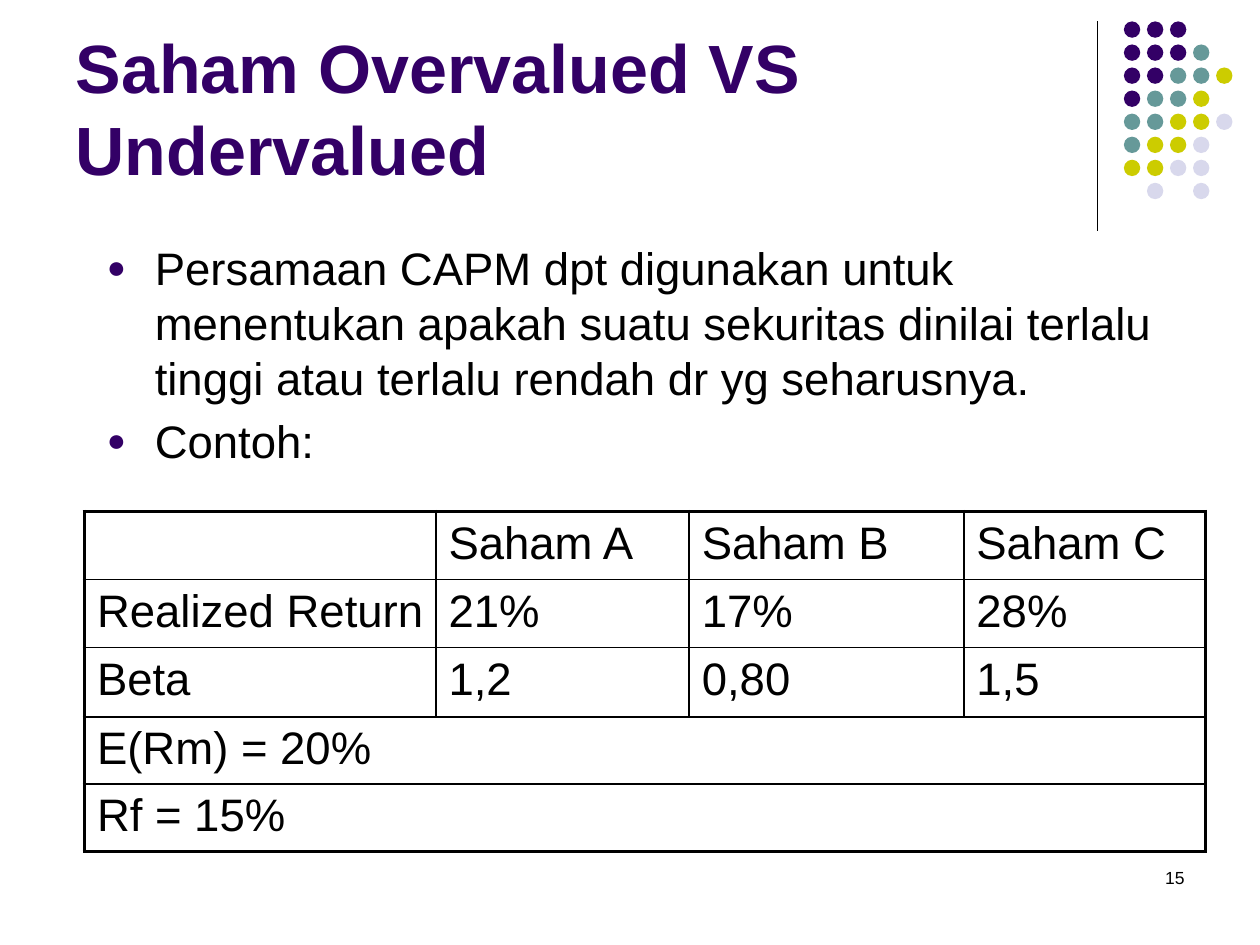
from lxml import etree
from pptx import Presentation, util as u
from pptx.dml.color import RGBColor
from pptx.enum import shapes, text
from pptx.oxml import ns

THEME = {
    "font": "Arial", "title_size": 39, "body_size": 26, "number_size": 10,
    "ink": "000000", "purple": "330066", "teal": "669999",
    "olive": "CCCC00", "lilac": "D8D8EC", "thin": 1, "thick": 2.25,
}

TITLE = "Saham Overvalued VS Undervalued"
BULLETS = [
    "Persamaan CAPM dpt digunakan untuk menentukan apakah suatu sekuritas "
    "dinilai terlalu tinggi atau terlalu rendah dr yg seharusnya.",
    "Contoh:",
]
ROWS = [
    ["", "Saham A", "Saham B", "Saham C"],
    ["Realized Return", "21%", "17%", "28%"],
    ["Beta", "1,2", "0,80", "1,5"],
    ["E(Rm) = 20%"],
    ["Rf = 15%"],
]
COLUMN_WIDTHS = [2.79, 2.01, 2.18, 1.92]
ROW_HEIGHTS = [0.54, 0.54, 0.55, 0.5, 0.5]
SLIDE_NUMBER = "15"

DOTS = ["PPP", "PPPT", "PPTTO", "PTTO", "TTOOL", "TOOL", "OOLL", " L L"]
DOT_COLORS = {"P": "purple", "T": "teal", "O": "olive", "L": "lilac"}
DOT_LEFT, DOT_TOP, DOT_SIZE, DOT_PITCH = 8.92, 0.17, 0.13, 0.183


def color(name):
    return RGBColor.from_string(THEME[name])


def box(left, top, width, height):
    return [u.Inches(value) for value in (left, top, width, height)]


def add_run(paragraph, words, size, ink="ink", bold=False):
    run = paragraph.add_run()
    run.text = words
    run.font.name = THEME["font"]
    run.font.size = u.Pt(THEME[size])
    run.font.bold = bold
    run.font.color.rgb = color(ink)


def add_bullet(paragraph):
    properties = paragraph._p.get_or_add_pPr()
    properties.set("marL", str(u.Inches(0.38)))
    properties.set("indent", str(u.Inches(-0.38)))
    bullet_color = etree.SubElement(properties, ns.qn("a:buClr"))
    etree.SubElement(bullet_color, ns.qn("a:srgbClr"), val=THEME["purple"])
    etree.SubElement(properties, ns.qn("a:buSzPct"), val="70000")
    etree.SubElement(properties, ns.qn("a:buFont"), typeface=THEME["font"])
    etree.SubElement(properties, ns.qn("a:buChar"), char="●")


def set_borders(cell, widths):
    properties = cell._tc.get_or_add_tcPr()
    for position, (side, width) in enumerate(widths.items()):
        line = etree.Element(ns.qn(f"a:ln{side}"), w=str(u.Pt(width)))
        fill = etree.SubElement(line, ns.qn("a:solidFill"))
        etree.SubElement(fill, ns.qn("a:srgbClr"), val=THEME["ink"])
        properties.insert(position, line)


def add_decoration(slide):
    divider = slide.shapes.add_connector(
        shapes.MSO_CONNECTOR.STRAIGHT, *box(8.71, 0.17, 8.71, 1.83))
    divider.line.color.rgb = color("ink")
    divider.line.width = u.Pt(0.75)
    etree.SubElement(divider._element.spPr, ns.qn("a:effectLst"))
    for row, pattern in enumerate(DOTS):
        for column, key in enumerate(pattern):
            if key == " ":
                continue
            dot = slide.shapes.add_shape(
                shapes.MSO_SHAPE.OVAL,
                *box(DOT_LEFT + column * DOT_PITCH, DOT_TOP + row * DOT_PITCH,
                     DOT_SIZE, DOT_SIZE))
            dot.shadow.inherit = False
            dot.fill.solid()
            dot.fill.fore_color.rgb = color(DOT_COLORS[key])
            dot.line.fill.background()


def add_title(slide):
    title = slide.shapes.title
    title.left, title.top, title.width, title.height = box(0.5, 0.13, 8.25, 1.42)
    frame = title.text_frame
    frame.auto_size = text.MSO_AUTO_SIZE.NONE
    frame.vertical_anchor = text.MSO_ANCHOR.BOTTOM
    frame.paragraphs[0].alignment = text.PP_ALIGN.LEFT
    add_run(frame.paragraphs[0], TITLE, "title_size", "purple", True)


def add_body(slide):
    frame = slide.shapes.add_textbox(*box(0.75, 1.86, 8.82, 2.1)).text_frame
    frame.word_wrap = True
    for index, words in enumerate(BULLETS):
        paragraph = frame.add_paragraph() if index else frame.paragraphs[0]
        paragraph.space_before = u.Pt(5.2)
        add_bullet(paragraph)
        add_run(paragraph, words, "body_size")


def add_stock_table(slide):
    row_count, column_count = len(ROWS), len(COLUMN_WIDTHS)
    table = slide.shapes.add_table(
        row_count, column_count,
        *box(0.67, 4.06, sum(COLUMN_WIDTHS), sum(ROW_HEIGHTS))).table
    table.first_row = table.horz_banding = False
    for column, width in zip(table.columns, COLUMN_WIDTHS):
        column.width = u.Inches(width)
    for row, height in zip(table.rows, ROW_HEIGHTS):
        row.height = u.Inches(height)
    thin, thick = THEME["thin"], THEME["thick"]
    for r, values in enumerate(ROWS):
        if len(values) == 1:
            table.cell(r, 0).merge(table.cell(r, column_count - 1))
        for c in range(column_count):
            cell = table.cell(r, c)
            cell.fill.background()
            cell.margin_right = u.Inches(0.02)
            last = c == column_count - 1 or len(values) == 1
            set_borders(cell, {
                "L": thick if c == 0 else thin,
                "R": thick if last else thin,
                "T": thick if r == 0 else thin,
                "B": thick if r == row_count - 1 else thin,
            })
            if c < len(values) and values[c]:
                add_run(cell.text_frame.paragraphs[0], values[c], "body_size")


def add_slide_number(slide):
    frame = slide.shapes.add_textbox(*box(7.17, 6.83, 2.33, 0.5)).text_frame
    frame.word_wrap = True
    frame.paragraphs[0].alignment = text.PP_ALIGN.RIGHT
    add_run(frame.paragraphs[0], SLIDE_NUMBER, "number_size")


def main():
    presentation = Presentation()
    presentation.slide_width, presentation.slide_height = u.Inches(10), u.Inches(7.5)
    slide = presentation.slides.add_slide(presentation.slide_layouts[5])
    add_decoration(slide)
    add_title(slide)
    add_body(slide)
    add_stock_table(slide)
    add_slide_number(slide)
    presentation.save("out.pptx")


if __name__ == "__main__":
    main()
